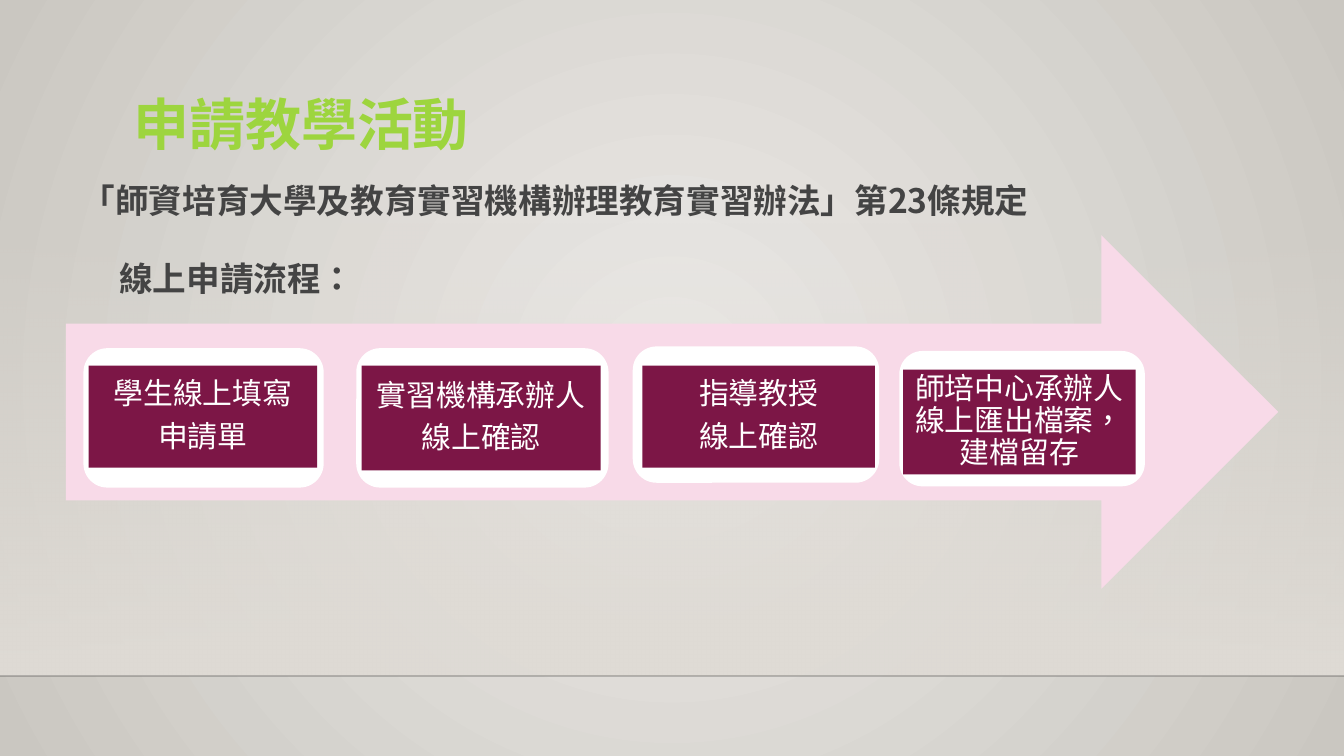
from lxml.etree import SubElement
from pptx import Presentation
from pptx.dml.color import RGBColor
from pptx.enum.shapes import MSO_CONNECTOR, MSO_SHAPE
from pptx.enum.text import MSO_ANCHOR, MSO_AUTO_SIZE, PP_ALIGN
from pptx.oxml.ns import qn
from pptx.util import Inches, Pt

WIDTH = Inches(10)
HEIGHT = WIDTH * 9 // 16
FONT = "Noto Sans CJK SC"
COLORS = {
    "center": "ECEAE7", "edge": "CAC7C1", "band": "DFDBD5", "rule": "000001",
    "title": "9DD53E", "body": "444444", "arrow": "F8DAE8",
    "card": "FFFFFF", "label": "7C1646", "label_text": "FFFFFF",
}

# Card area, card outline, label area, label lines; areas in percent of the slide
STEPS = [
    ((6.3, 46.22, 17.7, 18.13), 1.25, (6.6, 48.36, 17, 13.51),
     ["學生線上填寫", "申請單"]),
    ((26.6, 46.22, 18.6, 18.13), 1.25, (26.9, 48.36, 17.8, 13.87),
     ["實習機構承辦人", "線上確認"]),
    ((47.2, 46.04, 18.1, 17.6), 1.75, (47.8, 48.36, 17.3, 13.51),
     ["指導教授", "線上確認"]),
    ((67, 46.58, 18.1, 17.6), 1.25, (67.2, 48.89, 17.3, 13.87),
     ["師培中心承辦人線上匯出檔案，建檔留存"]),
]


def color(name):
    return RGBColor.from_string(COLORS[name])


def area(left, top, width, height):
    """Turn percentages of the slide into lengths."""
    return (int(WIDTH * left / 100), int(HEIGHT * top / 100),
            int(WIDTH * width / 100), int(HEIGHT * height / 100))


def set_alpha(color_element, percent):
    SubElement(color_element, qn("a:alpha"), val=str(percent * 1000))


def set_gradient(fill, first, last):
    fill.gradient()
    for stop, name, position in zip(fill.gradient_stops, (first, last), (0, 1)):
        stop.color.rgb = color(name)
        stop.position = position


def add_run(para, text, size, color_name, bold=False):
    span = para.add_run()
    span.text = text
    span.font.size = Pt(size)
    span.font.bold = bold
    span.font.name = FONT
    span.font.color.rgb = color(color_name)
    # East Asian font, and the language that centres the punctuation
    span.font._element.set("lang", "zh-TW")
    SubElement(span.font._element, qn("a:ea"), typeface=FONT)


def add_block(page, kind, place, fill_name):
    block = page.shapes.add_shape(kind, *area(*place))
    block.shadow.inherit = False
    block.fill.solid()
    block.fill.fore_color.rgb = color(fill_name)
    block.line.fill.background()
    return block


def add_background(page):
    # Radial glow from the middle of the slide
    fill = page.background.fill
    set_gradient(fill, "center", "edge")
    gradient = page.background._cSld.find(".//" + qn("a:gradFill"))
    gradient.remove(gradient.find(qn("a:lin")))
    glow = SubElement(gradient, qn("a:path"), {"path": "circle"})
    SubElement(glow, qn("a:fillToRect"), l="50000", t="50000", r="50000", b="50000")

    # Band that fades in downwards
    band = add_block(page, MSO_SHAPE.RECTANGLE, (0, 29.51, 100, 59.91), "band")
    set_gradient(band.fill, "band", "band")
    band.fill.gradient_angle = 270
    set_alpha(band._element.spPr.find(".//" + qn("a:srgbClr")), 0)

    # Thin rule under the band
    left, top, width, _ = area(0, 89.42, 100, 0)
    rule = page.shapes.add_connector(MSO_CONNECTOR.STRAIGHT, left, top, width, top)
    rule.line.width = Pt(1)
    rule.line.color.rgb = color("rule")
    set_alpha(rule._element.spPr.find(".//" + qn("a:srgbClr")), 20)
    SubElement(rule._element.spPr, qn("a:effectLst"))


def add_title(page, text):
    title = page.shapes.title
    title.left, title.top, title.width, title.height = area(8.9, 11.02, 27.4, 10.84)
    frame = title.text_frame
    frame.word_wrap = False
    frame.auto_size = MSO_AUTO_SIZE.SHAPE_TO_FIT_TEXT
    frame.vertical_anchor = MSO_ANCHOR.TOP
    para = frame.paragraphs[0]
    para.alignment = PP_ALIGN.LEFT
    add_run(para, text, 30, "title", bold=True)


def add_text(page, place, text):
    frame = page.shapes.add_textbox(*area(*place)).text_frame
    frame.word_wrap = True
    frame.auto_size = MSO_AUTO_SIZE.SHAPE_TO_FIT_TEXT
    add_run(frame.paragraphs[0], text, 18, "body", bold=True)


def add_step(page, card_place, outline, label_place, lines):
    card = add_block(page, MSO_SHAPE.ROUNDED_RECTANGLE, card_place, "card")
    card.line.color.rgb = color("card")
    card.line.width = Pt(outline)

    label = add_block(page, MSO_SHAPE.RECTANGLE, label_place, "label")
    frame = label.text_frame
    frame.word_wrap = True
    frame.vertical_anchor = MSO_ANCHOR.MIDDLE
    frame.margin_left = frame.margin_right = Inches(0.06)
    frame.margin_top = frame.margin_bottom = Inches(0.06)
    for index, line in enumerate(lines):
        para = frame.add_paragraph() if index else frame.paragraphs[0]
        para.alignment = PP_ALIGN.CENTER
        para.line_spacing = 0.9
        para.space_after = Pt(5.6)
        add_run(para, line, 16, "label_text")


def main():
    deck = Presentation()
    deck.slide_width, deck.slide_height = WIDTH, HEIGHT
    page = deck.slides.add_slide(deck.slide_layouts[5])

    add_background(page)
    add_title(page, "申請教學活動")

    # Process arrow with its four steps
    add_block(page, MSO_SHAPE.RIGHT_ARROW, (4.9, 31.11, 90.2, 46.76), "arrow")
    for step in STEPS:
        add_step(page, *step)

    # Rule cited and heading of the process
    add_text(page, (5.1, 22.93, 81.7, 7.11),
             "「師資培育大學及教育實習機構辦理教育實習辦法」第23條規定")
    add_text(page, (7.9, 33.24, 18.6, 7.11), "線上申請流程：")

    deck.save("out.pptx")


if __name__ == "__main__":
    main()
